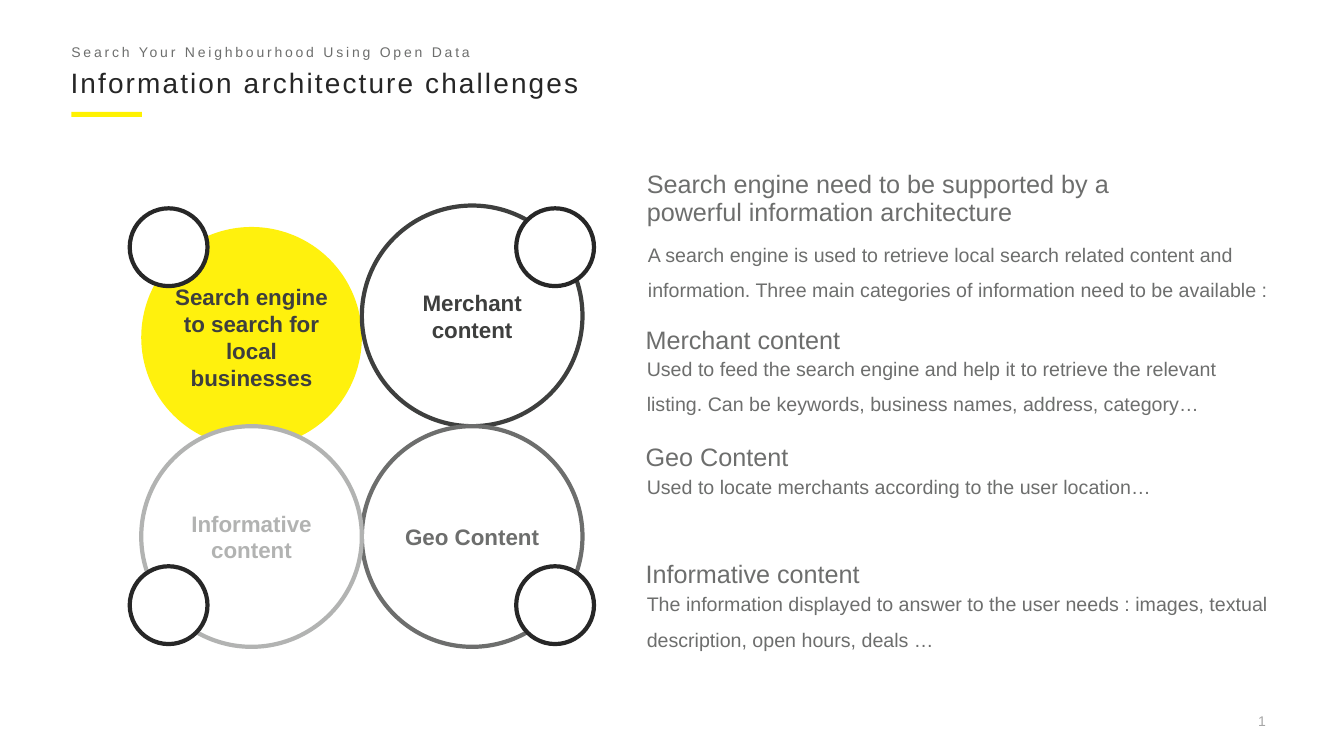
from lxml import etree
from pptx import Presentation
from pptx.dml.color import RGBColor
from pptx.enum.shapes import MSO_SHAPE
from pptx.enum.text import MSO_ANCHOR, PP_ALIGN
from pptx.oxml.ns import qn
from pptx.util import Cm, Pt

OVAL, RECTANGLE = MSO_SHAPE.OVAL, MSO_SHAPE.RECTANGLE
TOP, MIDDLE = MSO_ANCHOR.TOP, MSO_ANCHOR.MIDDLE
LEFT, CENTER, RIGHT = PP_ALIGN.LEFT, PP_ALIGN.CENTER, PP_ALIGN.RIGHT
FONT = "Arial"
COLORS = {
    "accent": "FFF200", "yellow": "FFF10D", "white": "FFFFFF",
    "title": "262626", "ring": "272727", "dark": "3E3F3E",
    "grey": "6D6E6D", "light": "B2B3B2", "number": "A6A6A6",
}

# Diagram: (label, column, row, drop in cm, fill, outline, text colour)
CIRCLES = [
    ("Search engine to search for local businesses", 0, 0, 0.54, "yellow", None, "dark"),
    ("Merchant content", 1, 0, 0, "white", "dark", "dark"),
    ("Geo Content", 1, 1, 0, "white", "grey", "grey"),
    ("Informative content", 0, 1, 0, "white", "light", "light"),
]
# Text column: (heading, description, top in cm, description offset in cm)
SECTIONS = [
    ("Search engine need to be supported by a powerful information architecture",
     "A search engine is used to retrieve local search related content and information. "
     "Three main categories of information need to be available :", 0, 1.48),
    ("Merchant content",
     "Used to feed the search engine and help it to retrieve the relevant listing. "
     "Can be keywords, business names, address, category…", 3.92, 0.43),
    ("Geo Content",
     "Used to locate merchants according to the user location…", 6.86, 0.48),
    ("Informative content",
     "The information displayed to answer to the user needs : images, textual "
     "description, open hours, deals …", 9.81, 0.48),
]


def color(name):
    return RGBColor.from_string(COLORS[name])


def format_text(shape, text, size, color_name, line_spacing=1.0, align=LEFT,
                anchor=TOP, bold=False, tracking=0):
    frame = shape.text_frame
    frame.text = text
    frame.word_wrap = True
    frame.vertical_anchor = anchor
    frame.margin_left = frame.margin_right = frame.margin_top = frame.margin_bottom = 0
    paragraph = frame.paragraphs[0]
    paragraph.alignment = align
    paragraph.line_spacing = line_spacing
    paragraph.space_before = Pt(0)
    run = paragraph.runs[0]
    run.font.name, run.font.size, run.font.bold = FONT, Pt(size), bold
    run.font.color.rgb = color(color_name)
    if tracking:
        run.font._element.set("spc", str(int(tracking * 100)))


def add_text(slide, left, top, width, height, text, size, color_name, **options):
    box = slide.shapes.add_textbox(Cm(left), Cm(top), Cm(width), Cm(height))
    format_text(box, text, size, color_name, **options)
    return box


def add_filled(slide, kind, left, top, width, height, fill, outline=None):
    shape = slide.shapes.add_shape(kind, Cm(left), Cm(top), Cm(width), Cm(height))
    shape.shadow.inherit = False
    shape.fill.solid()
    shape.fill.fore_color.rgb = color(fill)
    if outline:
        shape.line.color.rgb = color(outline)
        shape.line.width = Pt(3)
    else:
        shape.line.fill.background()
    return shape


def add_header(slide, left, top, width):
    add_text(slide, left, top, width, 0.43, "Search Your Neighbourhood Using Open Data",
             10, "grey", line_spacing=0.9, tracking=2)
    title = slide.shapes.title
    title.left, title.top = Cm(left - 0.02), Cm(top + 0.61)
    title.width, title.height = Cm(width), Cm(0.84)
    format_text(title, "Information architecture challenges", 20, "title",
                line_spacing=0.9, tracking=1.5)
    add_filled(slide, RECTANGLE, left, top + 1.68, 1.78, 0.13, "accent")


def add_circle_diagram(slide, left, top, size):
    diameter, badge = size / 2, 1.96
    overhang, inset = 0.29, 0.07
    for label, column, row, drop, fill, outline, text_color in CIRCLES:
        circle = add_filled(slide, OVAL, left + column * diameter,
                            top + row * diameter + drop, diameter, diameter, fill, outline)
        format_text(circle, label, 16, text_color, align=CENTER, anchor=MIDDLE, bold=True)
        # Badge in the outer corner
        badge_left = left - overhang + column * (size + 2 * overhang - badge)
        badge_top = top + inset + row * (size - 2 * inset - badge)
        add_filled(slide, OVAL, badge_left, badge_top, badge, badge, "white", "ring")


def add_sections(slide, left, top, width):
    for heading, description, offset, gap in SECTIONS:
        # The opening section sits slightly further right
        indent = 0 if offset else 0.03
        add_text(slide, left + indent + 0.03, top + offset + gap, width, 1.42, description,
                 14, "grey", line_spacing=1.5)
        add_text(slide, left + indent, top + offset, 11.91, 0.84, heading,
                 18, "grey", line_spacing=0.9)


def add_slide_number(slide, left, top, width, height):
    box = add_text(slide, left, top, width, height, "3", 10, "number",
                   align=RIGHT, anchor=MIDDLE)
    # Turn the run into a slide number field
    run = box.text_frame.paragraphs[0].runs[0]._r
    field = etree.Element(qn("a:fld"), id="{B6F15528-21DE-4FAA-801E-634DDDAF4B2B}",
                          type="slidenum")
    run.getparent().replace(run, field)
    field.extend(list(run))


def main():
    presentation = Presentation()
    presentation.slide_width, presentation.slide_height = Cm(33.87), Cm(19.05)
    slide = presentation.slides.add_slide(presentation.slide_layouts[5])
    add_header(slide, left=1.8, top=1.14, width=28.22)
    add_circle_diagram(slide, left=3.56, top=5.18, size=11.12)
    add_sections(slide, left=16.27, top=4.34, width=15.88)
    add_slide_number(slide, left=26.47, top=17.83, width=5.43, height=0.69)
    presentation.save("out.pptx")


if __name__ == "__main__":
    main()
